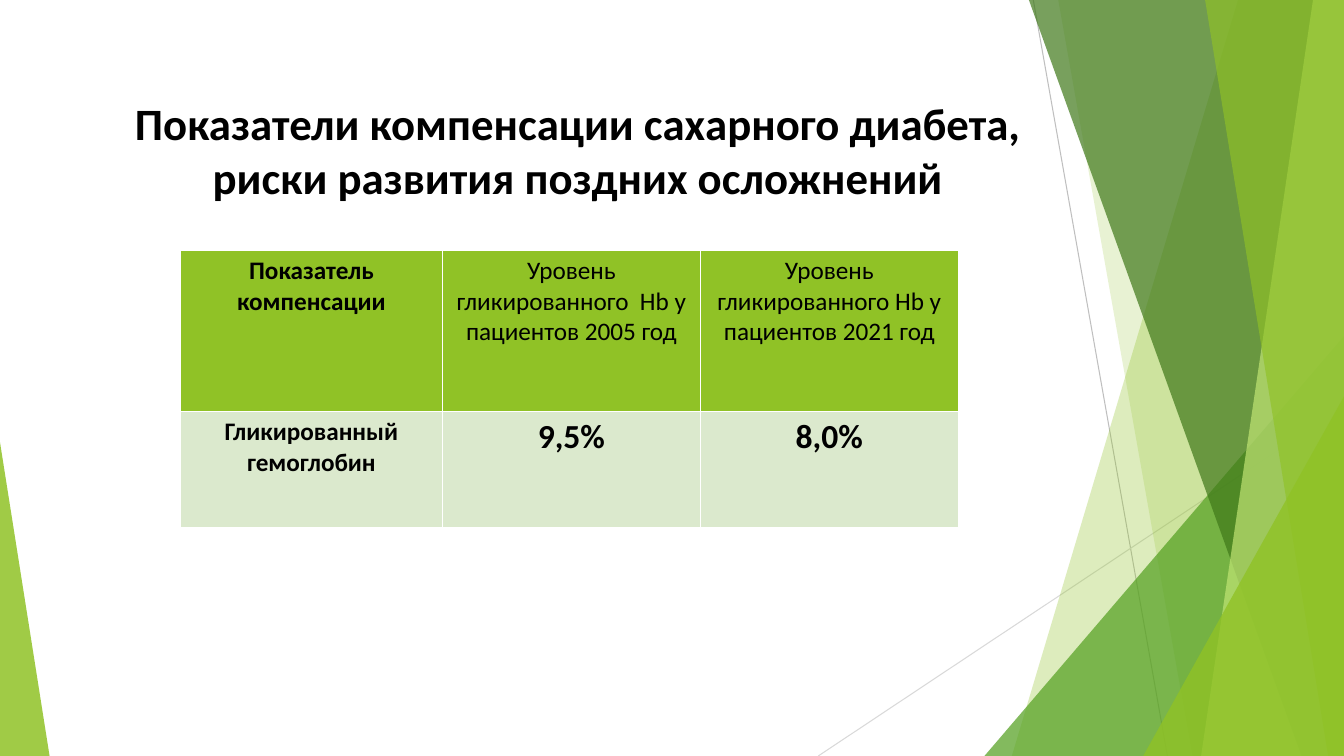
from lxml.etree import SubElement
from pptx import Presentation
from pptx.dml.color import RGBColor
from pptx.enum.shapes import MSO_CONNECTOR as Connector, MSO_SHAPE as Shape
from pptx.enum.text import MSO_ANCHOR as Anchor, MSO_AUTO_SIZE as AutoSize, PP_ALIGN as Align
from pptx.oxml import parse_xml
from pptx.oxml.ns import nsdecls, qn
from pptx.util import Cm, Pt

WIDTH, HEIGHT = 33.87, 19.05
FONT = "Calibri"
BLACK = RGBColor(0x00, 0x00, 0x00)
WHITE = RGBColor(0xFF, 0xFF, 0xFF)
LIME = RGBColor(0x90, 0xC2, 0x26)
PALE_LIME = RGBColor(0xC0, 0xE4, 0x74)
GREEN = RGBColor(0x54, 0xA0, 0x21)
DARK_GREEN = RGBColor(0x3F, 0x78, 0x19)
ROW_GREEN = RGBColor(0xDB, 0xE9, 0xCD)
GREY = RGBColor(0xBF, 0xBF, 0xBF)
LIGHT_GREY = RGBColor(0xD9, 0xD9, 0xD9)

TITLE = ["Показатели компенсации сахарного диабета,", "риски развития поздних осложнений"]
# Each cell: text, size, bold
ROWS = [
    [("Показатель компенсации", 18, True),
     ("Уровень гликированного  Hb у пациентов 2005 год", 18, False),
     ("Уровень гликированного Hb у пациентов 2021 год", 18, False)],
    [("Гликированный гемоглобин", 18, True), ("9,5%", 24, True), ("8,0%", 24, True)],
]
ROW_FILLS = [LIME, ROW_GREEN]
ROW_HEIGHTS = [4.06, 2.92]
COLUMN_WIDTHS = [6.6, 6.5, 6.5]


def paint(shape, color, opacity):
    """Fill a shape with a see-through colour, without outline or shadow."""
    shape.shadow.inherit = False
    shape.line.fill.background()
    shape.fill.solid()
    shape.fill.fore_color.rgb = color
    tint = shape.fill._xPr.find(qn("a:solidFill"))[0]
    SubElement(tint, qn("a:alpha"), val=str(opacity * 1000))


def add_hairline(page, start, end, color):
    line = page.shapes.add_connector(Connector.STRAIGHT, *map(Cm, start + end))
    line.line.color.rgb = color
    line.line.width = Pt(0.75)
    SubElement(line.element.spPr, qn("a:effectLst"))


def add_band(page, top_left, bottom_left, color, opacity):
    """Draw a full-height band that reaches the right edge of the slide."""
    builder = page.shapes.build_freeform(Cm(top_left), 0)
    corners = [(WIDTH, 0), (WIDTH, HEIGHT), (bottom_left, HEIGHT)]
    builder.add_line_segments([(Cm(x), Cm(y)) for x, y in corners])
    paint(builder.convert_to_shape(), color, opacity)


def add_corner(page, left, top, width, apex, color, opacity):
    """Draw a right triangle that stands on the bottom edge of the slide."""
    corner = page.shapes.add_shape(
        Shape.ISOSCELES_TRIANGLE, Cm(left), Cm(top), Cm(width), Cm(HEIGHT - top))
    corner.adjustments[0] = apex
    paint(corner, color, opacity)


def add_decoration(page):
    add_hairline(page, (26.04, 0), (29.42, HEIGHT), GREY)
    add_hairline(page, (WIDTH, 10.24), (20.62, HEIGHT), LIGHT_GREY)
    add_band(page, 31.2, 25.5, LIME, 30)
    add_band(page, 26.67, 30.05, LIME, 20)
    add_corner(page, 24.81, 8.47, WIDTH - 24.81, 1, GREEN, 72)
    add_band(page, 25.93, 32.8, DARK_GREEN, 70)
    add_band(page, 33.09, 30.27, PALE_LIME, 70)
    add_band(page, 30.37, 33.47, LIME, 65)
    add_corner(page, 28.81, 9.99, WIDTH - 28.81, 1, LIME, 80)
    add_corner(page, 0, 11.14, 1.25, 0, LIME, 85)


def format_para(para, size, bold):
    para.alignment = Align.CENTER
    para.font.name = FONT
    para.font.size = Pt(size)
    para.font.bold = bold
    para.font.color.rgb = BLACK


def set_title(page):
    title = page.shapes.title
    title.left, title.top, title.width, title.height = map(Cm, (1.96, 2.26, 25.22, 3))
    frame = title.text_frame
    frame.text = "\n".join(TITLE)
    frame.word_wrap = True
    frame.auto_size = AutoSize.NONE
    frame.vertical_anchor = Anchor.MIDDLE
    for para in frame.paragraphs:
        format_para(para, 32, True)
        para.space_before = Pt(0)


def set_borders(cell, color, width):
    properties = cell._tc.get_or_add_tcPr()
    for index, side in enumerate("LRTB"):
        properties.insert(index, parse_xml(
            f'<a:ln{side} {nsdecls("a")} w="{Pt(width)}"><a:solidFill>'
            f'<a:srgbClr val="{color}"/></a:solidFill></a:ln{side}>'))


def add_indicator_table(page):
    table = page.shapes.add_table(
        len(ROWS), len(COLUMN_WIDTHS), Cm(4.55), Cm(6.31),
        Cm(sum(COLUMN_WIDTHS)), Cm(sum(ROW_HEIGHTS))).table
    for column, width in zip(table.columns, COLUMN_WIDTHS):
        column.width = Cm(width)
    for row, height, fill, entries in zip(table.rows, ROW_HEIGHTS, ROW_FILLS, ROWS):
        row.height = Cm(height)
        for cell, (text, size, bold) in zip(row.cells, entries):
            cell.text = text
            format_para(cell.text_frame.paragraphs[0], size, bold)
            cell.fill.solid()
            cell.fill.fore_color.rgb = fill
            set_borders(cell, WHITE, 1)


def main():
    deck = Presentation()
    deck.slide_width, deck.slide_height = Cm(WIDTH), Cm(HEIGHT)
    page = deck.slides.add_slide(deck.slide_layouts.get_by_name("Title Only"))
    add_decoration(page)
    set_title(page)
    add_indicator_table(page)
    deck.save("out.pptx")


if __name__ == "__main__":
    main()
